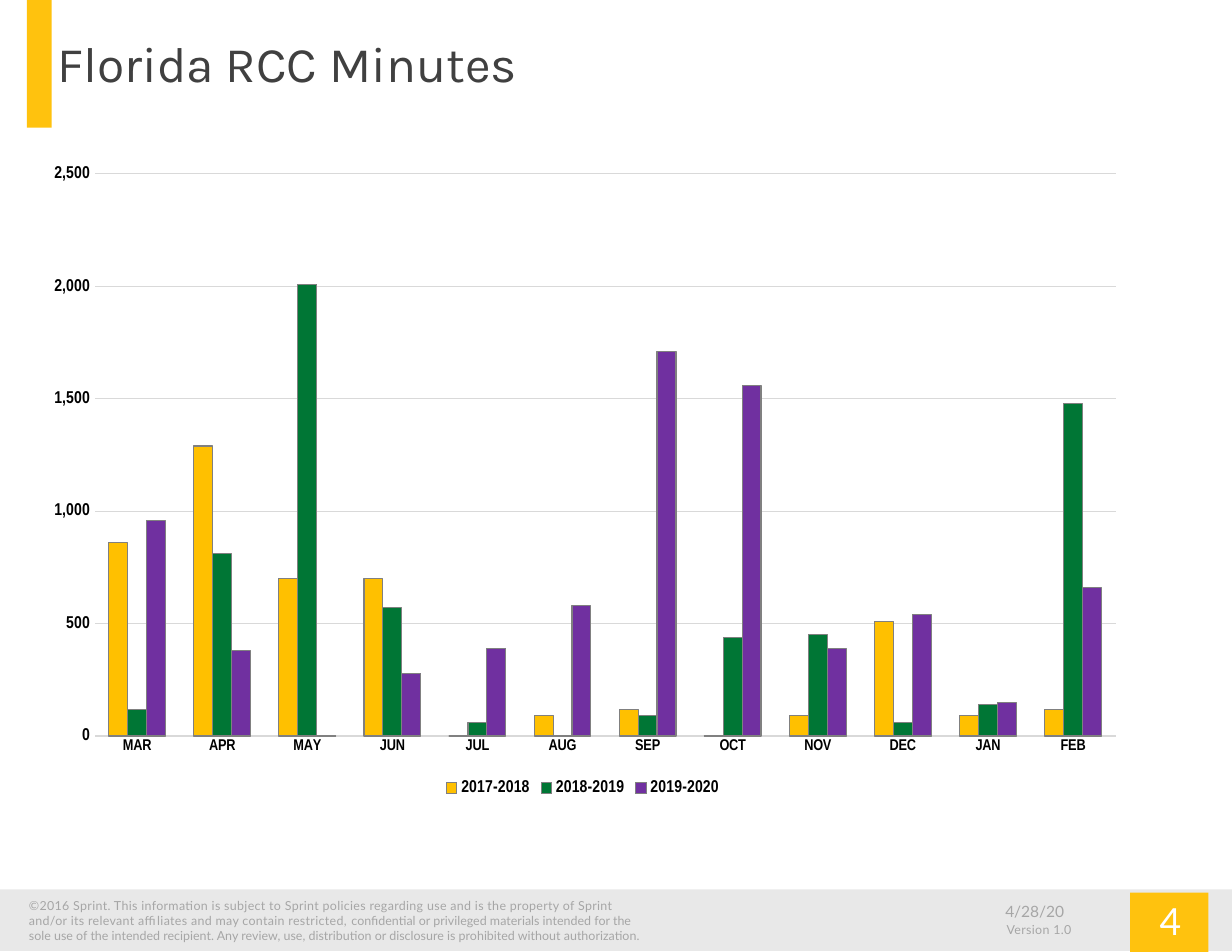
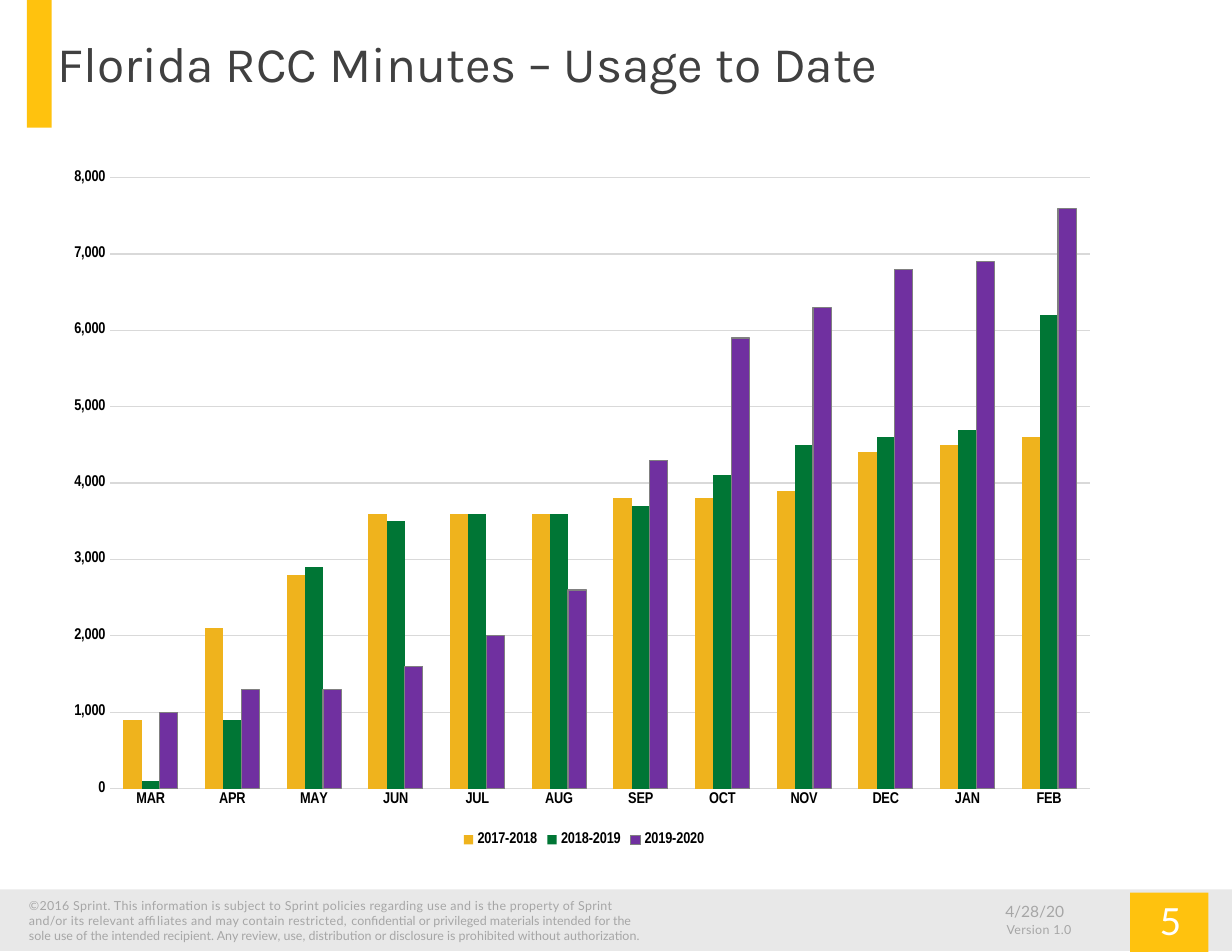
from dataclasses import dataclass

from lxml import etree
from pptx import Presentation
from pptx import util as u
from pptx.chart.data import CategoryChartData
from pptx.dml.color import RGBColor
from pptx.enum import chart as ch, shapes, text
from pptx.oxml import ns


@dataclass(frozen=True)
class Theme:
    """Colours, fonts and type sizes shared by the slides."""
    accent: str = "FFC20E"
    band: str = "E8E8E8"
    muted: str = "A6A6A6"
    heading: str = "404040"
    white: str = "FFFFFF"
    black: str = "000000"
    grid: str = "D9D9D9"
    outline: str = "808080"
    gold: str = "FFC000"
    ochre: str = "EFB31D"
    green: str = "007635"
    purple: str = "7030A0"
    title_font: str = "Karla"
    body_font: str = "Lato"
    chart_font: str = "Arial Narrow"
    title_size: int = 32
    number_size: int = 24
    date_size: int = 10
    small_size: int = 8
    label_size: int = 10
    large_label_size: int = 11


@dataclass(frozen=True)
class Box:
    """An area of the slide in grid columns and rows."""
    col: float
    row: float
    cols: float
    rows: float

    def inner(self, col, row, cols, rows):
        """Return an area placed relative to this one."""
        return Box(self.col + col, self.row + row, cols, rows)

    def emu(self):
        """Return left, top, width and height."""
        return [round(n * CELL) for n in (self.col, self.row, self.cols, self.rows)]


T = Theme()
CELL = u.Inches(0.1)
PAGE = Box(0, 0, 110, 85)
HEADER = PAGE.inner(2.4, 0, 97, 11.4)
FOOTER = PAGE.inner(0, 79.4, 110, 5.5)

MONTHS = "MAR APR MAY JUN JUL AUG SEP OCT NOV DEC JAN FEB".split()
YEARS = ("2017-2018", "2018-2019", "2019-2020")
NOTICE = (
    ("©2016 Sprint. This information is subject to Sprint policies regarding use and is "
     "the property of Sprint and/or its relevant affiliates and may contain restricted, ", 20),
    ("confidential or privileged materials intended for the sole use of the intended "
     "recipient. Any review, use, distribution or disclosure is prohibited without "
     "authorization.", 0),
)

SLIDES = (
    dict(
        title="Florida RCC Minutes", number=4,
        area=PAGE.inner(2.5, 13.8, 99.1, 57.7), plot=(0.06, 0.03, 0.92, 0.87),
        top=2500, step=500, size=T.large_label_size,
        colors=(T.gold, T.green, T.purple), outlined=YEARS,
        values=((860, 1290, 700, 700, 0, 90, 120, 0, 90, 510, 90, 120),
                (120, 810, 2010, 570, 60, 0, 90, 440, 450, 60, 140, 1480),
                (960, 380, 0, 280, 390, 580, 1710, 1560, 390, 540, 150, 660)),
    ),
    dict(
        title="Florida RCC Minutes – Usage to Date", number=5,
        area=PAGE.inner(5.1, 14, 94.1, 62), plot=(0.05, 0.03, 0.93, 0.88),
        top=8000, step=1000, size=T.label_size,
        colors=(T.ochre, T.green, T.purple), outlined=YEARS[2:],
        values=((900, 2100, 2800, 3600, 3600, 3600, 3800, 3800, 3900, 4400, 4500, 4600),
                (100, 900, 2900, 3500, 3600, 3600, 3700, 4100, 4500, 4600, 4700, 6200),
                (1000, 1300, 1300, 1600, 2000, 2600, 4300, 5900, 6300, 6800, 6900, 7600)),
    ),
)


def put(obj, **values):
    """Set several attributes of an object."""
    for name, value in values.items():
        setattr(obj, name, value)


def style(font, size, color, name=T.body_font, bold=False):
    """Format a font."""
    put(font, size=u.Pt(size), name=name, bold=bold)
    font.color.rgb = RGBColor.from_string(color)


def add_block(s, box, color):
    """Add a plain filled rectangle."""
    sp = s.shapes.add_shape(shapes.MSO_SHAPE.RECTANGLE, *box.emu())
    sp.shadow.inherit = False
    sp.fill.solid()
    sp.fill.fore_color.rgb = RGBColor.from_string(color)
    sp.line.fill.background()


def add_text(s, box, runs, size, color=T.muted, align=text.PP_ALIGN.LEFT):
    """Add a text box from pairs of wording and letter spacing."""
    tf = s.shapes.add_textbox(*box.emu()).text_frame
    tf.word_wrap = True
    p = tf.paragraphs[0]
    p.alignment = align
    for wording, spacing in runs:
        r = p.add_run()
        r.text = wording
        style(r.font, size, color)
        r.font._element.set("spc", str(spacing))


def add_header(s, box, title):
    """Place the accent bar and the slide title."""
    add_block(s, box.inner(0, 0, 2.2, box.rows), T.accent)
    sp = s.shapes.title
    left, top, width, height = box.inner(2.7, 1, 94.1, 9.2).emu()
    put(sp, left=left, top=top, width=width, height=height)
    tf = sp.text_frame
    put(tf, text=title, word_wrap=True, auto_size=text.MSO_AUTO_SIZE.NONE,
        vertical_anchor=text.MSO_ANCHOR.MIDDLE,
        margin_left=0, margin_right=0, margin_top=0, margin_bottom=0)
    p = tf.paragraphs[0]
    p.alignment = text.PP_ALIGN.LEFT
    style(p.runs[0].font, T.title_size, T.heading, T.title_font)


def add_footer(s, box, number):
    """Place the footer band with notice, date, version and slide number."""
    align = text.PP_ALIGN
    add_block(s, box, T.band)
    add_block(s, box.inner(100.9, 0.3, 7, 5.3), T.accent)
    add_text(s, box.inner(1.6, 0.3, 57.5, 6.4), NOTICE, T.small_size)
    add_text(s, box.inner(97.6, 0.3, 13.8, 4.8), [(str(number), 0)],
             T.number_size, T.white, align.CENTER)
    add_text(s, box.inner(78.5, 0.6, 17.5, 2.7), [("4/28/20", 0)],
             T.date_size, align=align.RIGHT)
    add_text(s, box.inner(88.9, 2.4, 13.6, 2.4), [("Version 1.0", 20)], T.small_size)


def set_plot_area(chart, shares):
    """Fix the inner plot area as shares of the chart."""
    area = chart._chartSpace.find(".//" + ns.qn("c:plotArea"))
    for old in area.findall(ns.qn("c:layout")):
        area.remove(old)
    layout = etree.Element(ns.qn("c:layout"))
    manual = etree.SubElement(layout, ns.qn("c:manualLayout"))
    settings = [("layoutTarget", "inner"), ("xMode", "edge"), ("yMode", "edge")]
    for tag, value in settings + list(zip("xywh", shares)):
        etree.SubElement(manual, ns.qn("c:" + tag)).set("val", str(value))
    area.insert(0, layout)


def add_minutes_chart(s, info):
    """Place the clustered columns of minutes by month and year."""
    data = CategoryChartData(number_format="#,##0")
    data.categories = MONTHS
    for year, values in zip(YEARS, info["values"]):
        data.add_series(year, values)
    chart = s.shapes.add_chart(
        ch.XL_CHART_TYPE.COLUMN_CLUSTERED, *info["area"].emu(), data).chart
    put(chart, has_title=False, has_legend=True)
    style(chart.font, T.label_size, T.black)
    put(chart.legend, position=ch.XL_LEGEND_POSITION.BOTTOM, include_in_layout=False)
    style(chart.legend.font, info["size"], T.black, T.chart_font, True)

    months, minutes = chart.category_axis, chart.value_axis
    for axis, size in ((months, T.label_size), (minutes, info["size"])):
        put(axis, major_tick_mark=ch.XL_TICK_MARK.NONE, minor_tick_mark=ch.XL_TICK_MARK.NONE)
        axis.format.line.fill.background()
        style(axis.tick_labels.font, size, T.black, T.chart_font, True)
    put(minutes, minimum_scale=0, maximum_scale=info["top"],
        major_unit=info["step"], has_major_gridlines=True)
    put(minutes.tick_labels, number_format="#,##0", number_format_is_linked=False)
    line = minutes.major_gridlines.format.line
    line.width = u.Pt(0.75)
    line.color.rgb = RGBColor.from_string(T.grid)

    plot = chart.plots[0]
    put(plot, gap_width=150, overlap=0, vary_by_categories=False)
    for series, color in zip(plot.series, info["colors"]):
        series.format.fill.solid()
        series.format.fill.fore_color.rgb = RGBColor.from_string(color)
        line = series.format.line
        if series.name in info["outlined"]:
            line.width = u.Pt(0.75)
            line.color.rgb = RGBColor.from_string(T.outline)
        else:
            line.fill.background()
    set_plot_area(chart, info["plot"])


def main():
    """Build both slides and save the file."""
    prs = Presentation()
    put(prs, slide_width=PAGE.cols * CELL, slide_height=PAGE.rows * CELL)
    for info in SLIDES:
        s = prs.slides.add_slide(prs.slide_layouts[5])
        add_header(s, HEADER, info["title"])
        add_footer(s, FOOTER, info["number"])
        add_minutes_chart(s, info)
    prs.save("out.pptx")


if __name__ == "__main__":
    main()
